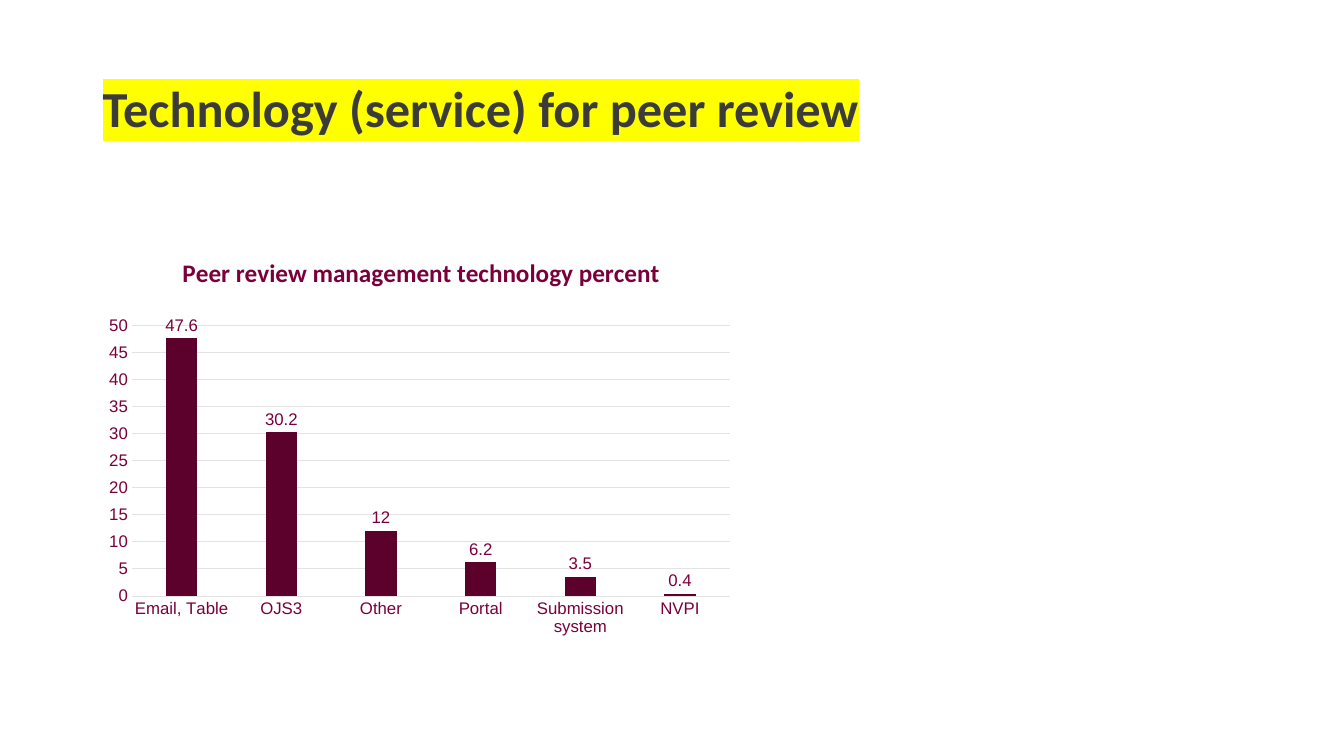
from lxml.etree import SubElement
from pptx import Presentation
from pptx.chart.data import CategoryChartData
from pptx.dml.color import RGBColor
from pptx.enum.chart import XL_CHART_TYPE, XL_LABEL_POSITION, XL_TICK_MARK
from pptx.enum.text import MSO_ANCHOR, PP_ALIGN
from pptx.oxml import parse_xml
from pptx.oxml.ns import nsdecls, qn
from pptx.util import Cm, Pt

TITLE = "Technology (service) for peer review"
CHART_TITLE = "Peer review management technology percent"
SHARES = {
    "Email, Table": 47.6,
    "OJS3": 30.2,
    "Other": 12,
    "Portal": 6.2,
    "Submission system": 3.5,
    "NVPI": 0.4,
}
COLOURS = {
    "title": "3B3C3A",
    "highlight": "FFFF00",
    "text": "7A003B",
    "bar": "5C002C",
    "grid": "E2E3E2",
}
TITLE_PLACE = {"x": 0.13, "y": 0.03}
PLOT_PLACE = {"x": 0.06, "y": 0.2, "w": 0.91, "h": 0.62}


def colour(name):
    return RGBColor.from_string(COLOURS[name])


def style(font, size, name, colour_name, bold=False):
    font.size = Pt(size)
    font.bold = bold
    font.color.rgb = colour(colour_name)
    font.name = name


def place(parent, before, fractions, inner=False):
    """Fix a chart part at fractions of the chart area."""
    for old in parent.findall(qn("c:layout")):
        parent.remove(old)
    layout = parse_xml(f"<c:layout {nsdecls('c')}/>")
    manual = SubElement(layout, qn("c:manualLayout"))
    settings = [("layoutTarget", "inner")] if inner else []
    settings += [("xMode", "edge"), ("yMode", "edge"), *fractions.items()]
    for tag, value in settings:
        SubElement(manual, qn(f"c:{tag}")).set("val", str(value))
    parent.insert(before, layout)


deck = Presentation()
deck.slide_width, deck.slide_height = Cm(33.87), Cm(19.05)
page = deck.slides.add_slide(deck.slide_layouts[5])

# Title
title = page.shapes.title
title.left, title.top, title.width, title.height = Cm(2.33), Cm(1.98), Cm(24.82), Cm(3.68)
frame = title.text_frame
frame.text = TITLE
frame.vertical_anchor = MSO_ANCHOR.TOP
para = frame.paragraphs[0]
para.alignment = PP_ALIGN.LEFT
para.line_spacing = 0.9
span = para.runs[0]
style(span.font, 36, "Calibri", "title", bold=True)
highlight = parse_xml(
    f"<a:highlight {nsdecls('a')}><a:srgbClr val='{COLOURS['highlight']}'/></a:highlight>")
# The highlight follows the fill in the run properties
span.font._element.find(qn("a:solidFill")).addnext(highlight)

# Chart
data = CategoryChartData()
data.categories = list(SHARES)
data.add_series("Series 1", list(SHARES.values()))
chart = page.shapes.add_chart(
    XL_CHART_TYPE.COLUMN_CLUSTERED, Cm(2.33), Cm(6), Cm(16.56), Cm(11), data).chart
style(chart.font, 10, "Arial", "text")
chart.has_legend = False

# Chart title
chart.has_title = True
heading = chart.chart_title.text_frame
heading.text = CHART_TITLE
style(heading.paragraphs[0].runs[0].font, 18, "Calibri", "text", bold=True)
place(chart.chart_title._element, 1, TITLE_PLACE)
place(chart._chartSpace.chart.plotArea, 0, PLOT_PLACE, inner=True)

# Axes
for axis in (chart.category_axis, chart.value_axis):
    axis.major_tick_mark = axis.minor_tick_mark = XL_TICK_MARK.NONE
    axis.format.line.fill.background()
    style(axis.tick_labels.font, 12, "Arial", "text")
chart.value_axis.minimum_scale = 0
chart.value_axis.maximum_scale = 50
chart.value_axis.major_unit = 5
grid = chart.value_axis.major_gridlines.format.line
grid.color.rgb = colour("grid")
grid.width = Pt(0.5)

# Bars and their values
plot = chart.plots[0]
plot.vary_by_categories = False
plot.gap_width = 219
plot.overlap = -27
bars = plot.series[0].format.fill
bars.solid()
bars.fore_color.rgb = colour("bar")
plot.has_data_labels = True
labels = plot.data_labels
labels.show_value = True
labels.position = XL_LABEL_POSITION.OUTSIDE_END
style(labels.font, 12, "Arial", "text")

deck.save("out.pptx")
